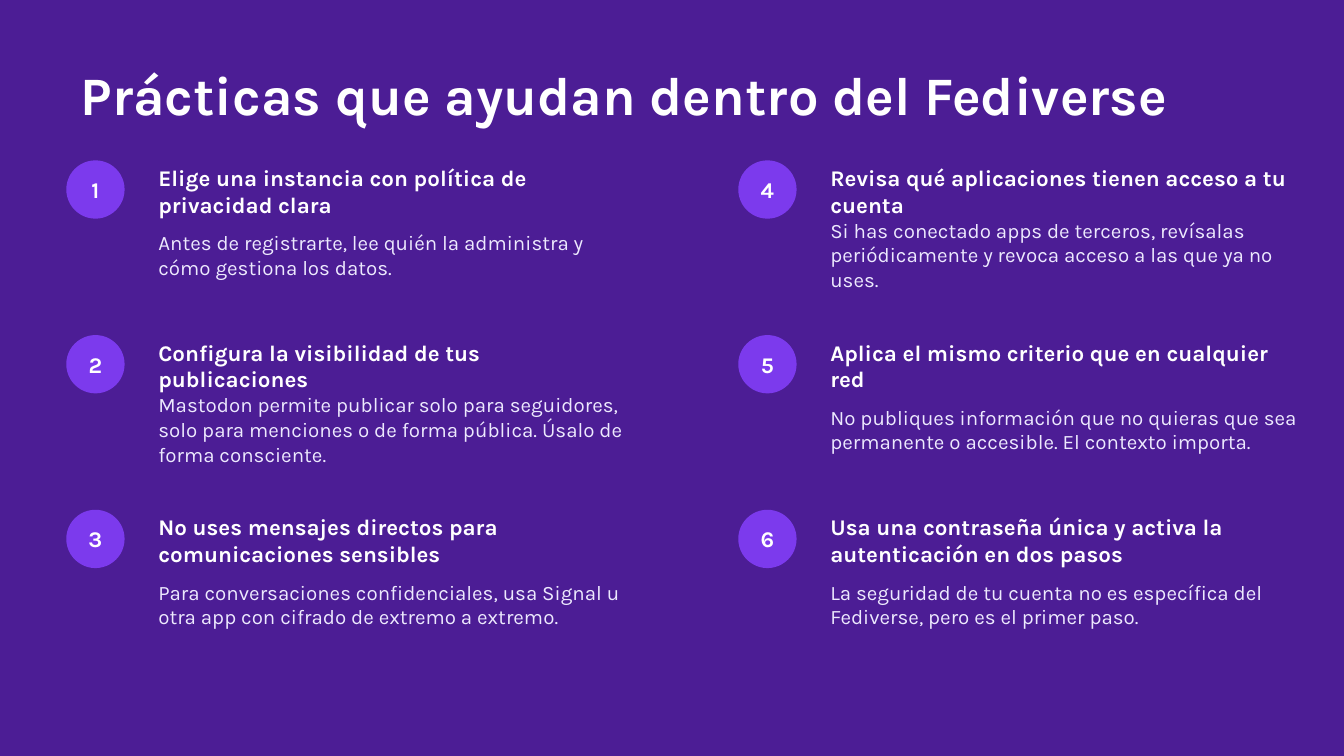
"""Build the slide of six good practices for the Fediverse."""
import dataclasses

import pptx
import pptx.dml.color
import pptx.enum.shapes
import pptx.enum.text
import pptx.shapes.autoshape
import pptx.slide
import pptx.util

EMU_PER_PX = 4572
FONT = "Karla"
PURPLE = pptx.dml.color.RGBColor(0x4C, 0x1D, 0x95)
VIOLET = pptx.dml.color.RGBColor(0x7C, 0x3A, 0xED)
LAVENDER = pptx.dml.color.RGBColor(0xED, 0xE9, 0xFE)
WHITE = pptx.dml.color.RGBColor(0xFF, 0xFF, 0xFF)
LEFT = pptx.enum.text.PP_ALIGN.LEFT
CENTER = pptx.enum.text.PP_ALIGN.CENTER

ROWS = 3
GRID_LEFT, GRID_TOP = 100, 240
COLUMN_STEP, ROW_STEP = 1000, 260
BADGE = 84
TEXT_OFFSET, TEXT_WIDTH = 116, 740
HEADING_OFFSET, HEADING_HEIGHT = 4, 80
ADVICE_HEIGHT = 110


@dataclasses.dataclass(frozen=True)
class Practice:
    heading: str
    advice: str


@dataclasses.dataclass(frozen=True)
class TextStyle:
    size: int
    color: pptx.dml.color.RGBColor
    bold: bool
    align: pptx.enum.text.PP_ALIGN = LEFT


TITLE = TextStyle(29, WHITE, True)
NUMBER = TextStyle(12, WHITE, True, CENTER)
HEADING = TextStyle(12, WHITE, True)
ADVICE = TextStyle(11, LAVENDER, False)

PRACTICES = [
    Practice("Elige una instancia con política de privacidad clara",
             "Antes de registrarte, lee quién la administra y cómo gestiona los datos."),
    Practice("Configura la visibilidad de tus publicaciones",
             "Mastodon permite publicar solo para seguidores, solo para menciones "
             "o de forma pública. Úsalo de forma consciente."),
    Practice("No uses mensajes directos para comunicaciones sensibles",
             "Para conversaciones confidenciales, usa Signal u otra app con cifrado "
             "de extremo a extremo."),
    Practice("Revisa qué aplicaciones tienen acceso a tu cuenta",
             "Si has conectado apps de terceros, revísalas periódicamente y revoca "
             "acceso a las que ya no uses."),
    Practice("Aplica el mismo criterio que en cualquier red",
             "No publiques información que no quieras que sea permanente o accesible. "
             "El contexto importa."),
    Practice("Usa una contraseña única y activa la autenticación en dos pasos",
             "La seguridad de tu cuenta no es específica del Fediverse, "
             "pero es el primer paso."),
]


def px(length: int) -> pptx.util.Emu:
    return pptx.util.Emu(length * EMU_PER_PX)


def write(shape: pptx.shapes.autoshape.Shape, text: str, style: TextStyle) -> None:
    frame = shape.text_frame
    frame.word_wrap = True
    frame.auto_size = pptx.enum.text.MSO_AUTO_SIZE.NONE
    frame.vertical_anchor = pptx.enum.text.MSO_ANCHOR.MIDDLE
    paragraph = frame.paragraphs[0]
    paragraph.alignment = style.align
    run = paragraph.add_run()
    run.text = text
    run.font.name = FONT
    run.font.size = pptx.util.Pt(style.size)
    run.font.bold = style.bold
    run.font.color.rgb = style.color


def draw_title(slide: pptx.slide.Slide, text: str) -> None:
    title = slide.shapes.title
    title.left, title.top, title.width, title.height = map(px, (100, 70, 1800, 140))
    write(title, text, TITLE)


def draw_badge(slide: pptx.slide.Slide, left: int, top: int, number: int) -> None:
    badge = slide.shapes.add_shape(
        pptx.enum.shapes.MSO_SHAPE.OVAL, px(left), px(top), px(BADGE), px(BADGE))
    badge.shadow.inherit = False
    badge.fill.solid()
    badge.fill.fore_color.rgb = VIOLET
    badge.line.color.rgb = VIOLET
    badge.line.width = pptx.util.Pt(1)
    badge.text_frame.margin_left = badge.text_frame.margin_right = 0
    badge.text_frame.margin_top = badge.text_frame.margin_bottom = 0
    write(badge, str(number), NUMBER)


def draw_text(slide: pptx.slide.Slide, left: int, top: int, height: int,
              text: str, style: TextStyle) -> None:
    box = slide.shapes.add_textbox(px(left), px(top), px(TEXT_WIDTH), px(height))
    write(box, text, style)


def draw_practice(slide: pptx.slide.Slide, index: int, practice: Practice) -> None:
    column, row = divmod(index, ROWS)
    left = GRID_LEFT + column * COLUMN_STEP
    top = GRID_TOP + row * ROW_STEP
    text_left = left + TEXT_OFFSET
    heading_top = top + HEADING_OFFSET
    draw_badge(slide, left, top, index + 1)
    draw_text(slide, text_left, heading_top, HEADING_HEIGHT, practice.heading, HEADING)
    draw_text(slide, text_left, heading_top + HEADING_HEIGHT, ADVICE_HEIGHT,
              practice.advice, ADVICE)


def main() -> None:
    deck = pptx.Presentation()
    deck.slide_width, deck.slide_height = px(2000), px(1125)
    slide = deck.slides.add_slide(deck.slide_layouts.get_by_name("Title Only"))
    slide.background.fill.solid()
    slide.background.fill.fore_color.rgb = PURPLE
    draw_title(slide, "Prácticas que ayudan dentro del Fediverse")
    for index, practice in enumerate(PRACTICES):
        draw_practice(slide, index, practice)
    deck.save("out.pptx")


if __name__ == "__main__":
    main()
